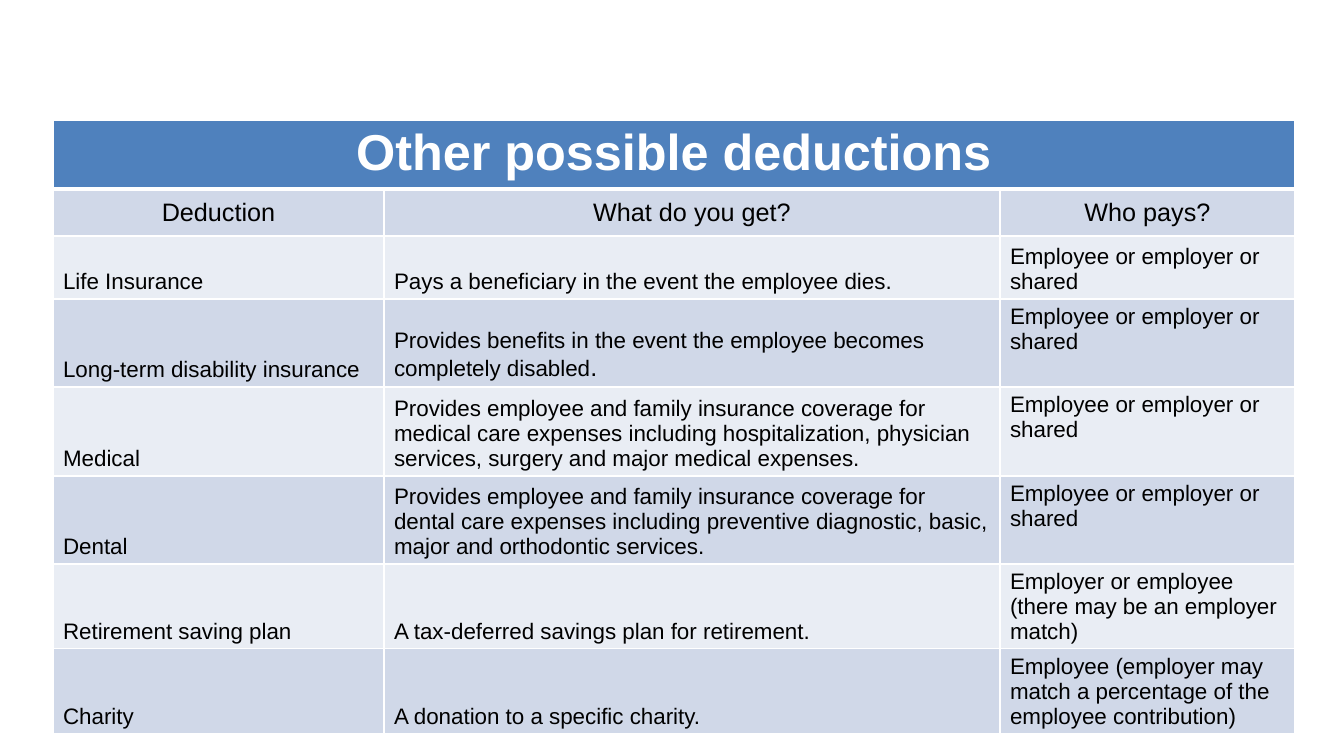
from dataclasses import dataclass

from lxml import etree
from pptx import Presentation
from pptx.dml.color import RGBColor
from pptx.enum.text import MSO_ANCHOR, PP_ALIGN
from pptx.oxml.ns import qn
from pptx.table import _Cell
from pptx.util import Emu, Pt

TOP, MIDDLE, BOTTOM = MSO_ANCHOR.TOP, MSO_ANCHOR.MIDDLE, MSO_ANCHOR.BOTTOM
LEFT, CENTER = PP_ALIGN.LEFT, PP_ALIGN.CENTER

WHITE = RGBColor(0xFF, 0xFF, 0xFF)
BLACK = RGBColor(0x00, 0x00, 0x00)
HEADING_BLUE = RGBColor(0x4F, 0x81, 0xBD)
BANDS = (RGBColor(0xD0, 0xD8, 0xE8), RGBColor(0xE9, 0xED, 0xF4))

FONT = "Arial"
EMU_PER_PX = 914400 * 10 // 1008
SLIDE_WIDTH, SLIDE_HEIGHT = 1344, 756
TABLE_LEFT, TABLE_TOP = 53, 120
COLUMN_WIDTHS = (331, 616, 295)
ROW_HEIGHTS = (69, 47, 63, 88, 89, 88, 85, 85)

HEADING = "Other possible deductions"
COLUMN_TITLES = ("Deduction", "What do you get?", "Who pays?")
SHARED = "Employee or employer or shared"


@dataclass(frozen=True)
class Run:
    text: str
    size: int = 16
    color: RGBColor = BLACK
    bold: bool = False


@dataclass(frozen=True)
class Deduction:
    name: str
    benefit: tuple[Run, ...]
    payer: str
    payer_anchor: MSO_ANCHOR = BOTTOM


DEDUCTIONS = (
    Deduction(
        "Life Insurance",
        (Run("Pays a beneficiary in the event the employee dies."),),
        SHARED,
    ),
    Deduction(
        "Long-term disability insurance",
        (
            Run("Provides benefits in the event the employee becomes completely disabled"),
            Run(".", 18),
        ),
        SHARED,
        TOP,
    ),
    Deduction(
        "Medical",
        (Run(
            "Provides employee and family insurance coverage for medical care expenses "
            "including hospitalization, physician services, surgery and major medical expenses."
        ),),
        SHARED,
        TOP,
    ),
    Deduction(
        "Dental",
        (Run(
            "Provides employee and family insurance coverage for dental care expenses "
            "including preventive diagnostic, basic, major and orthodontic services."
        ),),
        SHARED,
        TOP,
    ),
    Deduction(
        "Retirement saving plan",
        (Run("A tax-deferred savings plan for retirement."),),
        "Employer or employee (there may be an employer match)",
    ),
    Deduction(
        "Charity",
        (Run("A donation to a specific charity."),),
        "Employee (employer may match a percentage of the employee contribution)",
    ),
)


def px(length: int) -> Emu:
    return Emu(length * EMU_PER_PX)


def style_cell(cell: _Cell, fill: RGBColor, top: int = 1, bottom: int = 1) -> None:
    properties = cell._tc.get_or_add_tcPr()
    for side, points in (("L", 1), ("R", 1), ("T", top), ("B", bottom)):
        border = etree.SubElement(properties, qn(f"a:ln{side}"), w=str(Pt(points)))
        solid = etree.SubElement(border, qn("a:solidFill"))
        etree.SubElement(solid, qn("a:srgbClr"), val=str(WHITE))
    cell.fill.solid()
    cell.fill.fore_color.rgb = fill


def write_cell(
    cell: _Cell, runs: tuple[Run, ...], anchor: MSO_ANCHOR, alignment: PP_ALIGN
) -> None:
    cell.vertical_anchor = anchor
    paragraph = cell.text_frame.paragraphs[0]
    paragraph.alignment = alignment
    for part in runs:
        run = paragraph.add_run()
        run.text = part.text
        run.font.name = FONT
        run.font.size = Pt(part.size)
        run.font.bold = part.bold
        run.font.color.rgb = part.color


def main() -> None:
    presentation = Presentation()
    presentation.slide_width = px(SLIDE_WIDTH)
    presentation.slide_height = px(SLIDE_HEIGHT)
    slide = presentation.slides.add_slide(presentation.slide_layouts[6])

    deductions = slide.shapes.add_table(
        len(ROW_HEIGHTS), len(COLUMN_WIDTHS), px(TABLE_LEFT), px(TABLE_TOP),
        px(sum(COLUMN_WIDTHS)), px(sum(ROW_HEIGHTS)),
    ).table
    for column, width in zip(deductions.columns, COLUMN_WIDTHS):
        column.width = px(width)
    for row, height in zip(deductions.rows, ROW_HEIGHTS):
        row.height = px(height)

    heading = deductions.cell(0, 0)
    heading.merge(deductions.cell(0, len(COLUMN_WIDTHS) - 1))
    for cell in deductions.rows[0].cells:
        style_cell(cell, HEADING_BLUE, bottom=3)
    write_cell(heading, (Run(HEADING, 36, WHITE, True),), TOP, CENTER)

    for column, title in enumerate(COLUMN_TITLES):
        cell = deductions.cell(1, column)
        style_cell(cell, BANDS[0], top=3)
        write_cell(cell, (Run(title, 18),), MIDDLE, CENTER)

    for row, deduction in enumerate(DEDUCTIONS, start=2):
        contents = (
            ((Run(deduction.name),), BOTTOM),
            (deduction.benefit, BOTTOM),
            ((Run(deduction.payer),), deduction.payer_anchor),
        )
        for column, (runs, anchor) in enumerate(contents):
            cell = deductions.cell(row, column)
            style_cell(cell, BANDS[(row - 1) % 2])
            write_cell(cell, runs, anchor, LEFT)

    presentation.save("out.pptx")


if __name__ == "__main__":
    main()
